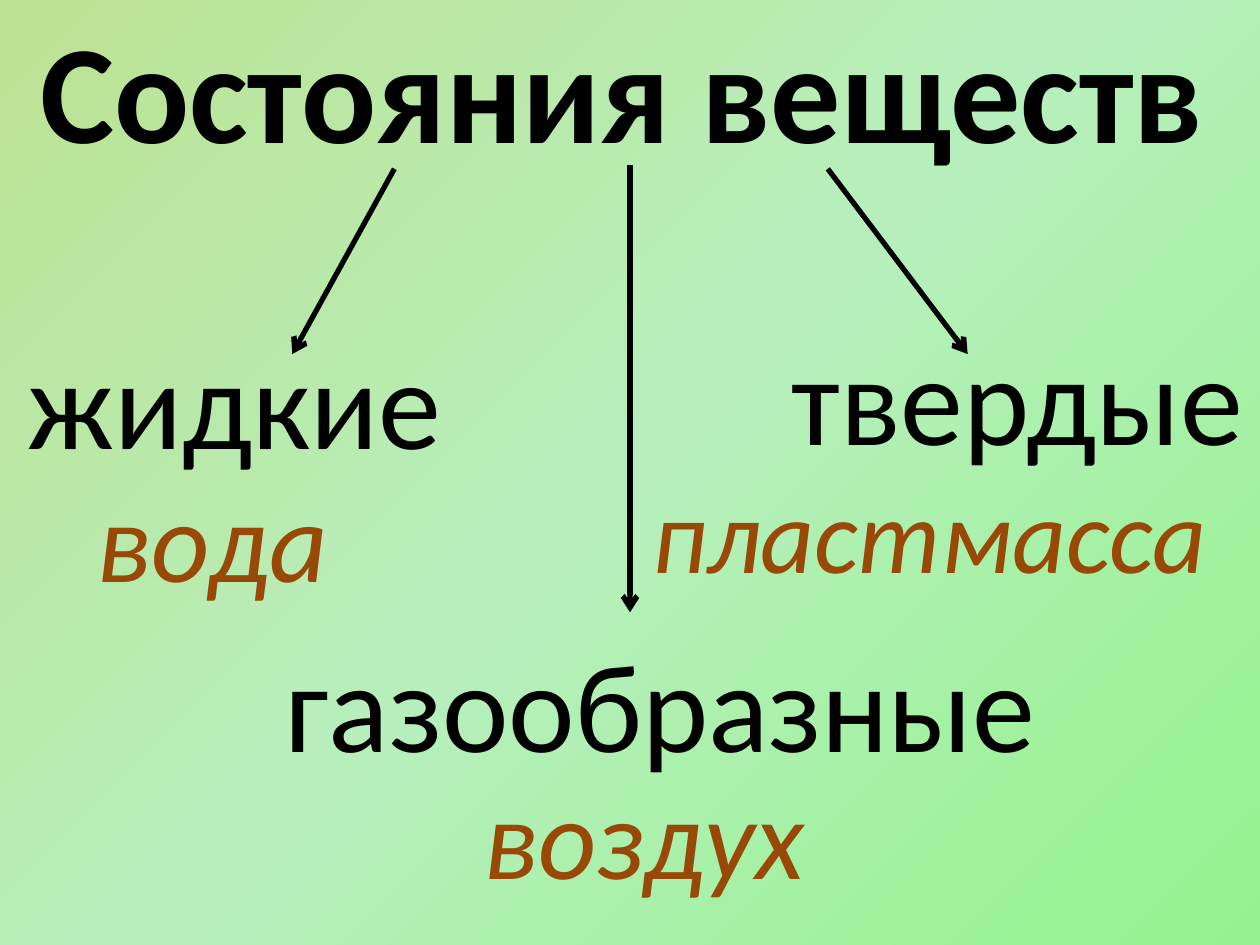
"""Builds a slide that sorts the states of matter, each with an example."""
from copy import deepcopy

from lxml import etree
from pptx import Presentation
from pptx.dml.color import RGBColor
from pptx.enum.shapes import MSO_CONNECTOR
from pptx.enum.text import MSO_ANCHOR, MSO_AUTO_SIZE, PP_ALIGN
from pptx.oxml.ns import qn
from pptx.util import Inches, Pt

STRAIGHT = MSO_CONNECTOR.STRAIGHT
TOP, MIDDLE = MSO_ANCHOR.TOP, MSO_ANCHOR.MIDDLE
LEFT, CENTER = PP_ALIGN.LEFT, PP_ALIGN.CENTER
NO_AUTOFIT = MSO_AUTO_SIZE.NONE
BLACK = RGBColor(0x00, 0x00, 0x00)
BROWN = RGBColor(0x98, 0x48, 0x07)
OLIVE = RGBColor(0xBC, 0xE2, 0x92)
MINT = RGBColor(0xB7, 0xEF, 0xBC)
GREEN = RGBColor(0x94, 0xF3, 0x8D)
TITLE_ONLY = 5
COLUMNS, ROWS = 100, 75


class MatterSlide:
    """Holds the style and the slide; places are in columns and rows of the grid."""

    font_name = "Calibri"
    state_size = 72
    arrow_width = Pt(3)

    def __init__(self, deck):
        self.column = deck.slide_width / COLUMNS
        self.row = deck.slide_height / ROWS
        self.slide = deck.slides.add_slide(deck.slide_layouts[TITLE_ONLY])

    def place(self, *numbers):
        units = (self.column, self.row) * 2
        return [round(number * unit) for number, unit in zip(numbers, units)]

    def background(self, start, middle, end):
        fill = self.slide.background.fill
        fill.gradient()
        fill.gradient_angle = 315
        first = fill.gradient_stops[0]._gs
        first.addnext(deepcopy(first))
        for stop, color, position in zip(fill.gradient_stops, (start, middle, end), (0, 0.5, 1)):
            stop.color.rgb = color
            stop.position = position

    def set_text(self, holder, text, size, color, align, anchor=TOP, bold=False, italic=False):
        frame = holder.text_frame
        frame.word_wrap = True
        frame.auto_size = NO_AUTOFIT
        frame.vertical_anchor = anchor
        paragraph = frame.paragraphs[0]
        paragraph.text = text
        paragraph.alignment = align
        font = paragraph.font
        font.name, font.size = self.font_name, Pt(size)
        font.bold, font.italic = bold, italic
        font.color.rgb = color

    def title(self, text, box):
        heading = self.slide.shapes.title
        heading.left, heading.top, heading.width, heading.height = self.place(*box)
        self.set_text(heading, text, 80, BLACK, CENTER, MIDDLE, bold=True)

    def state(self, text, box, align):
        label = self.slide.shapes.add_textbox(*self.place(*box))
        self.set_text(label, text, self.state_size, BLACK, align)

    def example(self, text, box, size):
        label = self.slide.shapes.add_textbox(*self.place(*box))
        self.set_text(label, text, size, BROWN, LEFT, italic=True)

    def arrow(self, *ends):
        arrow = self.slide.shapes.add_connector(STRAIGHT, *self.place(*ends))
        arrow.line.color.rgb = BLACK
        arrow.line.width = self.arrow_width
        etree.SubElement(arrow.line._get_or_add_ln(), qn("a:tailEnd"), type="arrow")
        etree.SubElement(arrow._element.spPr, qn("a:effectLst"))


def main():
    deck = Presentation()
    deck.slide_width, deck.slide_height = Inches(10), Inches(7.5)
    matter = MatterSlide(deck)
    matter.background(OLIVE, MINT, GREEN)
    matter.title("Состояния веществ", (0, -1.1, 98.8, 16.1))

    matter.state("жидкие", (1.2, 25.2, 52.8, 9.2), LEFT)
    matter.state("твердые", (47.8, 24.9, 65.9, 11.8), CENTER)
    matter.state("газообразные", (19.5, 49.2, 65.9, 11.8), CENTER)

    matter.arrow(31.3, 13.4, 23.2, 28.1)
    matter.arrow(65.7, 13.4, 76.8, 28.1)
    matter.arrow(50, 13.1, 50, 48.6)

    matter.example("вода", (6.7, 36.7, 52.8, 9.2), 65)
    matter.example("пластмасса", (50.8, 36.7, 52.8, 9.2), 60)
    matter.example("воздух", (37.4, 60.3, 52.8, 9.2), 65)
    deck.save("out.pptx")


if __name__ == "__main__":
    main()
